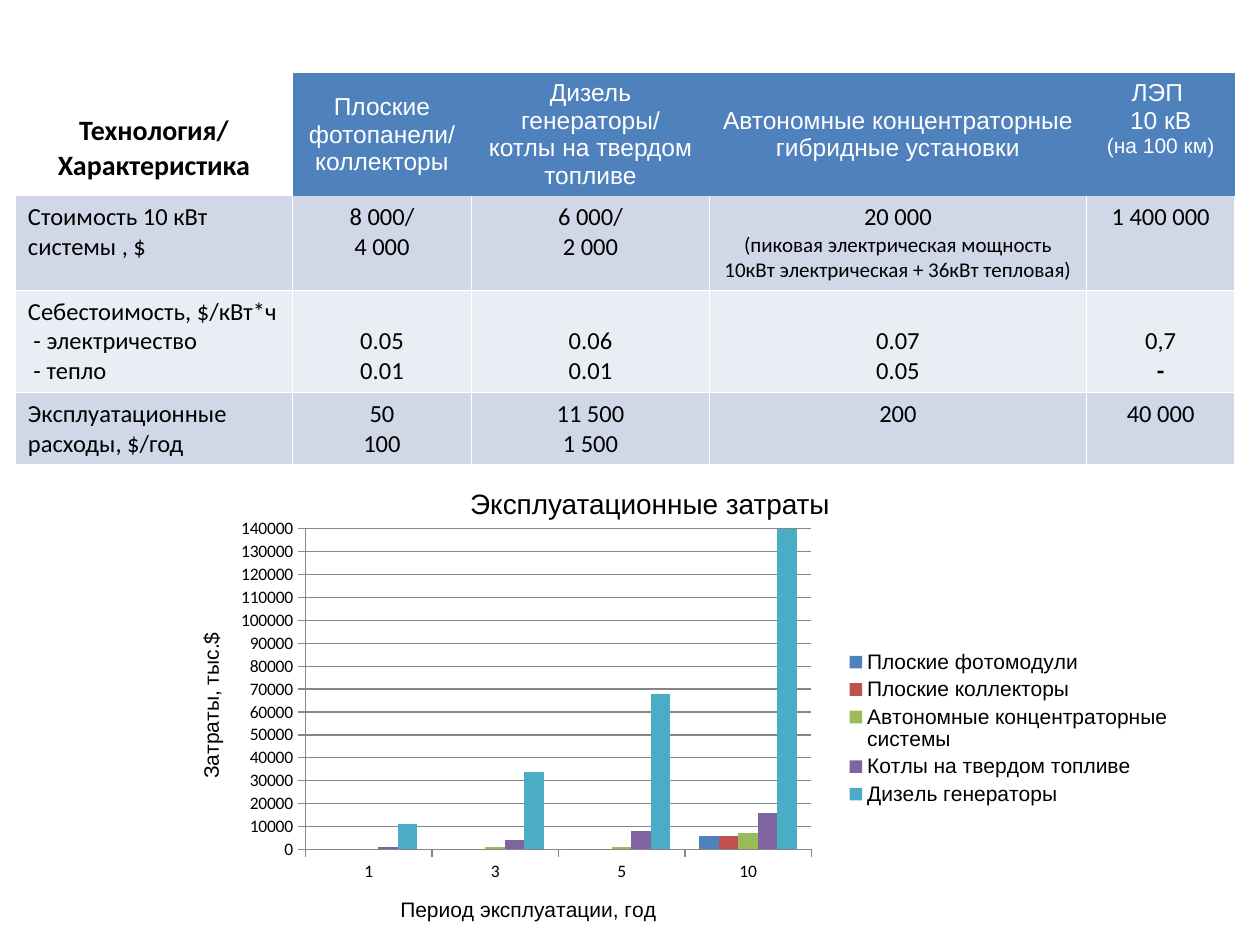
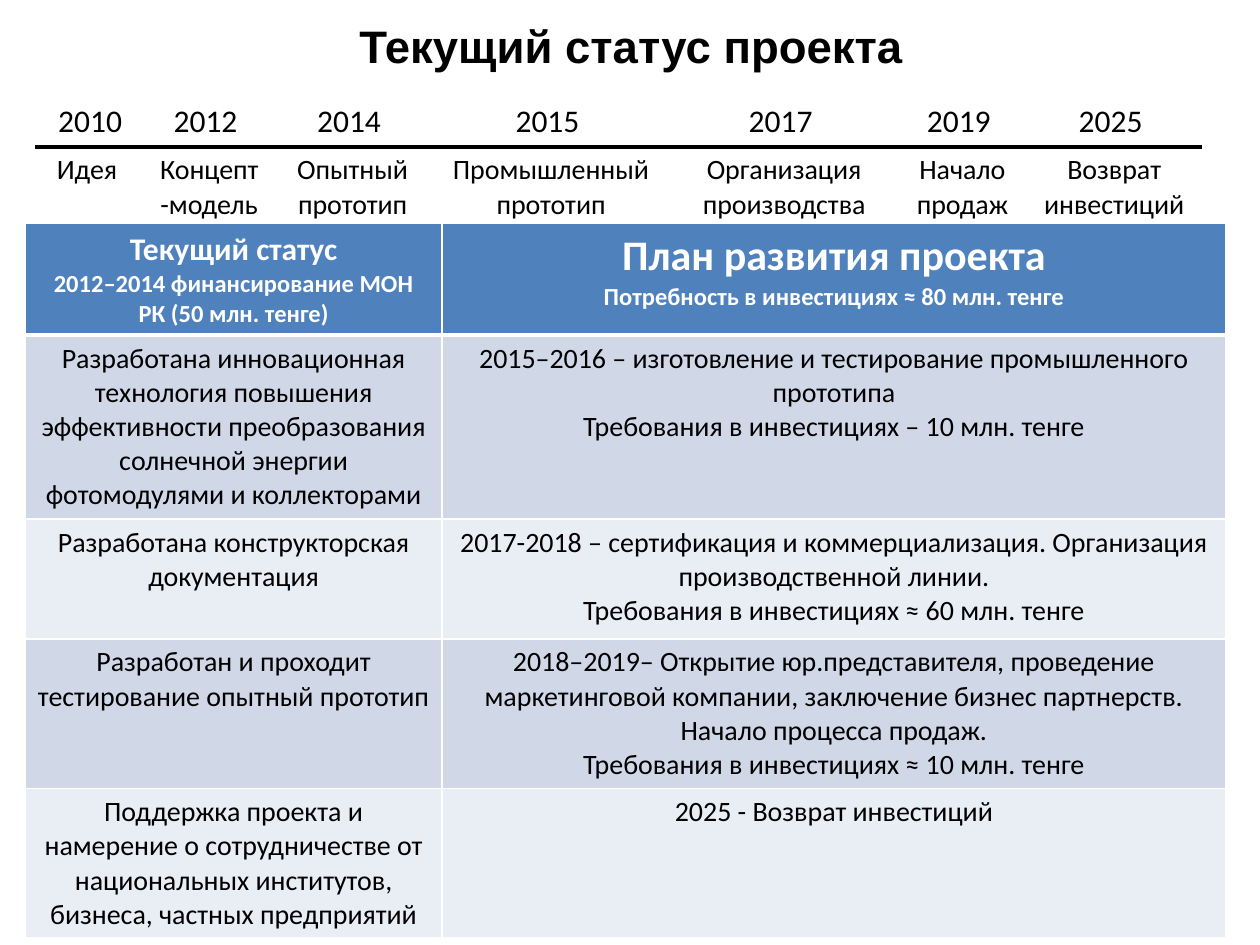
from lxml import etree
from pptx import Presentation
from pptx.chart.data import CategoryChartData
from pptx.dml.color import RGBColor
from pptx.enum import chart as ch, text as t
from pptx.oxml import ns
from pptx.util import Pt

BLACK, WHITE, BLUE, GRID = "000000", "FFFFFF", "4F81BD", "868686"
BANDS = ["D0D8E8", "E9EDF4"]
SERIES = [BLUE, "C0504D", "9BBB59", "8064A2", "4BACC6"]
NO_STYLE = "{2D5ABB26-0587-4C30-8999-92F81FD0307C}"
CENTER, LEFT = t.PP_ALIGN.CENTER, t.PP_ALIGN.LEFT
TOP, MIDDLE = t.MSO_ANCHOR.TOP, t.MSO_ANCHOR.MIDDLE
GRID_BORDERS = {"L": (WHITE, 1), "R": (WHITE, 1), "B": (WHITE, 1)}


def rgb(value):
    return RGBColor.from_string(value)


def style(font, name, size, color=BLACK, bold=False):
    font.name, font.size, font.bold = name, Pt(size), bold
    font.color.rgb = rgb(color)


def write(tf, lines, name="Calibri", size=14, color=BLACK, bold=False, align=CENTER):
    tf.word_wrap = True
    for i, line in enumerate(lines):
        text, line_size, line_bold = (line, size, bold) if isinstance(line, str) else line
        p = tf.paragraphs[0] if i == 0 else tf.add_paragraph()
        p.alignment = align
        r = p.add_run()
        r.text = text
        style(r.font, name, line_size, color, line_bold)


def set_borders(cell, borders):
    tc_pr = cell._tc.get_or_add_tcPr()
    sides = [side for side in "LRTB" if side in borders]
    for i, side in enumerate(sides):
        color, width = borders[side]
        ln = etree.Element(ns.qn(f"a:ln{side}"), w=str(Pt(width)))
        fill = etree.SubElement(ln, ns.qn("a:solidFill"))
        etree.SubElement(fill, ns.qn("a:srgbClr"), val=color)
        tc_pr.insert(i, ln)


def fill_cell(cell, lines, fill=None, borders=None, anchor=TOP, skip=0, **text):
    if fill:
        cell.fill.solid()
        cell.fill.fore_color.rgb = rgb(fill)
    else:
        cell.fill.background()
    set_borders(cell, borders or {})
    cell.vertical_anchor = anchor
    cell.margin_top = Pt(3.6 + skip)
    write(cell.text_frame, lines, **text)


def new_table(s, left, top, cols, rows):
    table = s.shapes.add_table(len(rows), len(cols), Pt(left), Pt(top),
                               Pt(sum(cols)), Pt(sum(rows))).table
    table.first_row = table.horz_banding = False
    table._tbl.tblPr.find(ns.qn("a:tableStyleId")).text = NO_STYLE
    for col, width in zip(table.columns, cols):
        col.width = Pt(width)
    for row, height in zip(table.rows, rows):
        row.height = Pt(height)
    return table


def technology_table(s, left, top):
    headers = [
        (["Плоские", "фотопанели/", "коллекторы"], MIDDLE),
        (["Дизель генераторы/", "котлы на твердом топливе"], TOP),
        (["Автономные концентраторные гибридные установки"], MIDDLE),
        (["ЛЭП ", "10 кВ", ("(на 100 км)", 12, False)], TOP),
    ]
    body = [
        [["Стоимость 10 кВт системы , $"], ["8 000/", "4 000"], ["6 000/", "2 000"],
         ["20 000", ("(пиковая электрическая мощность", 12, False),
          ("10кВт электрическая + 36кВт тепловая)", 12, False)], ["1 400 000"]],
        [["Себестоимость, $/кВт*ч", " - электричество", " - тепло"], ["0.05", "0.01"],
         ["0.06", "0.01"], ["0.07", "0.05"], ["0,7", ("-", 14, True)]],
        [["Эксплуатационные расходы, $/год"], ["50", "100"], ["11 500", "1 500"],
         ["200"], ["40 000"]],
    ]
    table = new_table(s, left, top, [158.4, 102.2, 136.1, 215.3, 85], [69.8, 54, 58.4, 41.2])
    fill_cell(table.cell(0, 0), ["Технология/", "Характеристика"], skip=19.8, size=16, bold=True)
    for c, (lines, anchor) in enumerate(headers, 1):
        fill_cell(table.cell(0, c), lines, BLUE, anchor=anchor, name="Arial", color=WHITE)
    for r, row in enumerate(body, 1):
        for c, lines in enumerate(row):
            fill_cell(table.cell(r, c), lines, BANDS[(r - 1) % 2], GRID_BORDERS,
                      skip=17.1 if r == 2 and c else 0, align=CENTER if c else LEFT)


def place(parent, after, x, y, w=None, h=None):
    for old in parent.findall(ns.qn("c:layout")):
        parent.remove(old)
    layout = etree.Element(ns.qn("c:layout"))
    manual = etree.SubElement(layout, ns.qn("c:manualLayout"))
    values = {"xMode": "edge", "yMode": "edge", "x": x, "y": y, "w": w, "h": h}
    if after is None:
        values = {"layoutTarget": "inner", **values}
    for tag, value in values.items():
        if value is not None:
            etree.SubElement(manual, ns.qn(f"c:{tag}"), val=str(value))
    parent.insert(0 if after is None else parent.index(parent.find(ns.qn(after))) + 1, layout)


def format_axis(axis, title, x, y):
    axis.has_title = True
    tf = axis.axis_title.text_frame
    r = tf.paragraphs[0].add_run()
    r.text = title
    style(r.font, "Arial", 12)
    place(axis.axis_title._element, "c:tx", x, y)
    axis.major_tick_mark = ch.XL_TICK_MARK.OUTSIDE
    axis.minor_tick_mark = ch.XL_TICK_MARK.NONE
    axis.format.line.color.rgb = rgb(GRID)
    style(axis.tick_labels.font, "Calibri", 10)


def cost_chart(s, left, top, width, height):
    data = CategoryChartData()
    data.categories = ["1", "3", "5", "10"]
    data.add_series("Плоские фотомодули", [0, 0, 0, 6000])
    data.add_series("Плоские коллекторы", [0, 0, 0, 6000])
    data.add_series("Автономные концентраторные системы", [0, 1000, 1000, 7000])
    data.add_series("Котлы на твердом топливе", [1000, 4000, 8000, 16000])
    data.add_series("Дизель генераторы", [11000, 34000, 68000, 143000])
    chart = s.shapes.add_chart(ch.XL_CHART_TYPE.COLUMN_CLUSTERED, Pt(left), Pt(top),
                               Pt(width), Pt(height), data).chart
    chart.has_title = False
    style(chart.font, "Calibri", 10)
    plot = chart.plots[0]
    plot.gap_width, plot.overlap, plot.vary_by_categories = 150, 0, False
    for series, color in zip(plot.series, SERIES):
        series.format.fill.solid()
        series.format.fill.fore_color.rgb = rgb(color)
    format_axis(chart.category_axis, "Период эксплуатации, год", 0.23, 0.88)
    costs = chart.value_axis
    format_axis(costs, "Затраты, тыс.$", 0.03, 0.27)
    costs.minimum_scale, costs.maximum_scale, costs.major_unit = 0, 140000, 10000
    costs.major_gridlines.format.line.color.rgb = rgb(GRID)
    chart.has_legend = True
    legend = chart.legend
    legend.position = ch.XL_LEGEND_POSITION.RIGHT
    legend.include_in_layout = False
    style(legend.font, "Arial", 12)
    place(legend._element, "c:legendPos", 0.67, 0.31, 0.33, 0.38)
    place(chart._chartSpace.chart.plotArea, None, 0.14, 0.04, 0.5, 0.74)


def chart_heading(s, left, top, width, height):
    tf = s.shapes.add_textbox(Pt(left), Pt(top), Pt(width), Pt(height)).text_frame
    tf.vertical_anchor = MIDDLE
    write(tf, ["Эксплуатационные затраты"], "Arial", 16)


def slide_title(s, text, left, top, width, height):
    sp = s.shapes.title
    sp.left, sp.top, sp.width, sp.height = Pt(left), Pt(top), Pt(width), Pt(height)
    sp.text_frame.vertical_anchor = MIDDLE
    write(sp.text_frame, [text], "Arial", 26, bold=True)


def timeline(s, left, top):
    stages = [
        ("2010", "Идея ", 62.6), ("2012 ", "Концепт-модель ", 73.4),
        ("2014 ", "Опытный прототип", 90.7), ("2015 ", "Промышленный прототип", 136.1),
        ("2017 ", "Организация производства", 130.3), ("2019 ", "Начало продаж", 73.4),
        ("2025 ", "Возврат инвестиций", 100.1),
    ]
    table = new_table(s, left, top, [width for _, _, width in stages], [29.2, 45.6])
    for c, (year, stage, _) in enumerate(stages):
        fill_cell(table.cell(0, c), [year], borders={"B": (BLACK, 3)}, size=18)
        fill_cell(table.cell(1, c), [stage], borders={"T": (BLACK, 3)}, size=16)


def plan_table(s, left, top):
    headers = [
        [("Текущий статус", 18, True), "2012–2014 финансирование МОН РК (50 млн. тенге)"],
        [("План развития проекта", 24, True), "Потребность в инвестициях ≈ 80 млн. тенге"],
    ]
    body = [
        (["Разработана инновационная технология повышения эффективности преобразования "
          "солнечной энергии фотомодулями и коллекторами"],
         ["2015–2016 – изготовление и тестирование промышленного прототипа",
          "Требования в инвестициях – 10 млн. тенге"]),
        (["Разработана конструкторская документация"],
         ["2017-2018 – сертификация и коммерциализация. Организация производственной линии.",
          "Требования в инвестициях ≈ 60 млн. тенге"]),
        (["Разработан и проходит тестирование опытный прототип "],
         ["2018–2019– Открытие юр.представителя, проведение маркетинговой компании, "
          "заключение бизнес партнерств. Начало процесса продаж.",
          "Требования в инвестициях ≈ 10 млн. тенге"]),
        (["Поддержка проекта и намерение о сотрудничестве от национальных институтов, "
          "бизнеса, частных предприятий"],
         ["2025 - Возврат инвестиций"]),
    ]
    table = new_table(s, left, top, [238.3, 447.8], [62.6, 105.2, 68.4, 85.6, 85])
    for c, lines in enumerate(headers):
        fill_cell(table.cell(0, c), lines, BLUE, {**GRID_BORDERS, "B": (WHITE, 3)},
                  color=WHITE, bold=True)
    for r, row in enumerate(body, 1):
        for c, lines in enumerate(row):
            fill_cell(table.cell(r, c), lines, BANDS[(r - 1) % 2], GRID_BORDERS, size=16)


def main():
    prs = Presentation()
    prs.slide_width, prs.slide_height = Pt(720), Pt(540)

    s = prs.slides.add_slide(prs.slide_layouts[6])
    technology_table(s, 8.8, 41.8)
    chart_heading(s, 76.3, 242.6, 590.4, 90)
    cost_chart(s, 93.6, 292.3, 578.2, 247.7)

    s = prs.slides.add_slide(prs.slide_layouts[5])
    slide_title(s, "Текущий статус проекта", 36.7, -19.4, 648, 90)
    timeline(s, 20.2, 54.7)
    plan_table(s, 14.4, 128.2)

    prs.save("out.pptx")


if __name__ == "__main__":
    main()
